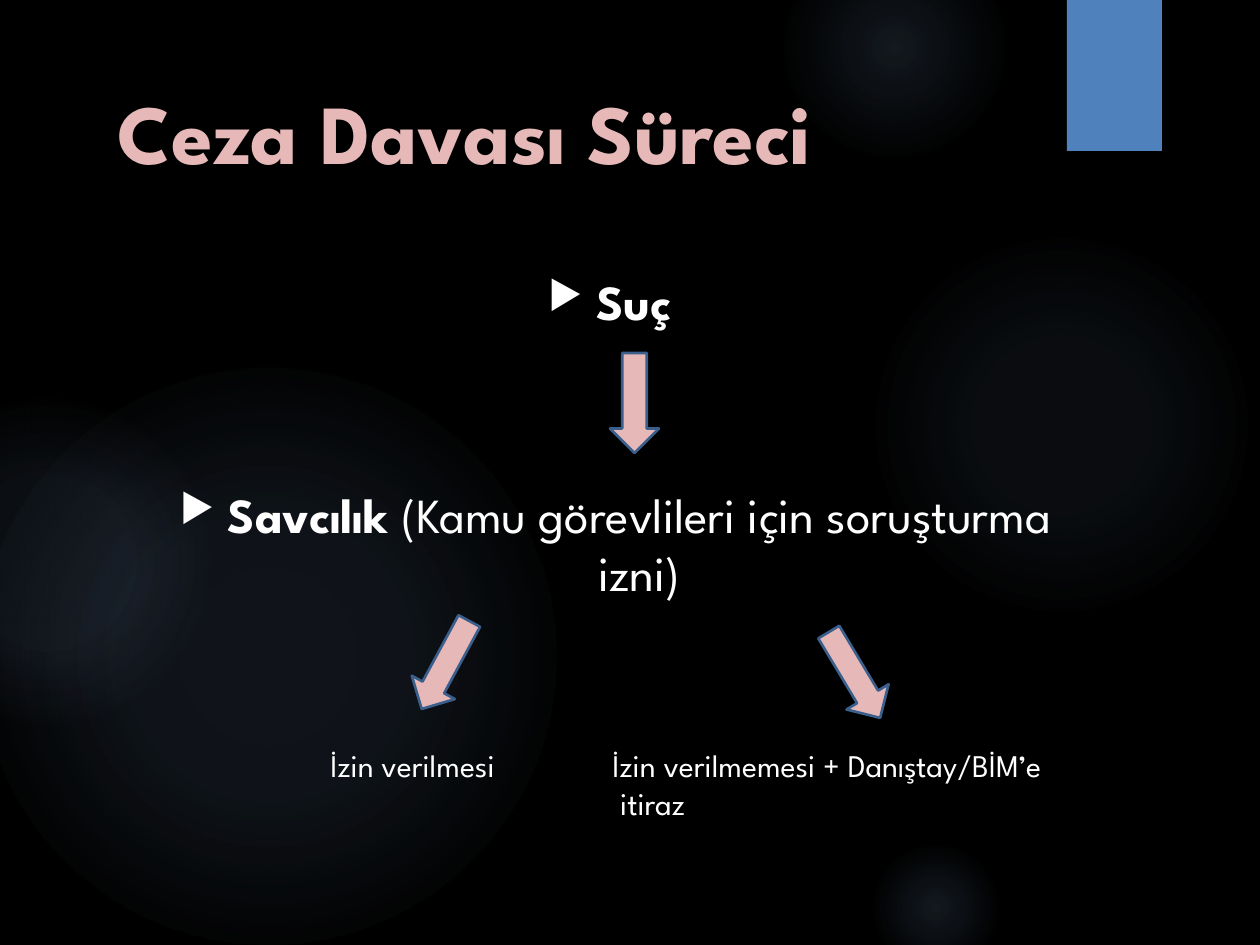
from lxml import etree
from pptx import Presentation
from pptx.dml.color import RGBColor
from pptx.enum.shapes import MSO_SHAPE
from pptx.enum.text import PP_ALIGN
from pptx.oxml import parse_xml
from pptx.oxml.ns import qn
from pptx.util import Emu, Pt

OVAL, RECTANGLE, DOWN_ARROW = MSO_SHAPE.OVAL, MSO_SHAPE.RECTANGLE, MSO_SHAPE.DOWN_ARROW
LEFT, CENTER = PP_ALIGN.LEFT, PP_ALIGN.CENTER
PX = 914400 // 126
DRAWING_NS = "http://schemas.openxmlformats.org/drawingml/2006/main"
FONT = "League Spartan"

BLACK = RGBColor(0x00, 0x00, 0x00)
WHITE = RGBColor(0xFF, 0xFF, 0xFF)
PINK = RGBColor(0xE6, 0xB9, 0xB8)
BLUE = RGBColor(0x4F, 0x81, 0xBD)
DARK_BLUE = RGBColor(0x3A, 0x5F, 0x8C)
GLOW_BLUE = RGBColor(0x8E, 0xB4, 0xE3)

# left, top, diameter, (position %, opacity %) stops
GLOWS = [
    (868, 231, 388, [(0, 7), (36, 6), (69, 0)]),
    (784, -63, 221, [(0, 14), (36, 7), (73, 0)]),
    (868, 840, 136, [(0, 14), (36, 7), (66, 0)]),
    (-21, 368, 577, [(0, 11), (36, 10), (75, 0)]),
    (-116, 399, 325, [(0, 8), (36, 8), (72, 0)]),
]
RIBBON = (1067, 0, 95, 151)

# Each paragraph is a list of (text, bold) runs
TITLE = [[("Ceza Davası Süreci", True)]]
STEPS = [
    [("Suç ", True)],
    [("Savcılık ", True), ("(Kamu görevlileri için soruşturma izni)", False)],
]
GRANTED = [[("İzin verilmesi", False)]]
REFUSED = [[("İzin verilmemesi + Danıştay/BİM’e", False)], [(" itiraz", False)]]

ARROW_SIZE = (49, 100)
ARROWS = [(610, 353, 0), (421, 615, 28.4), (830, 625, 329.1)]  # left, top, rotation


def add_preset(slide, kind, left, top, width, height):
    box = [Emu(n * PX) for n in (left, top, width, height)]
    shape = slide.shapes.add_shape(kind, *box)
    shape.shadow.inherit = False
    return shape


def add_glow(slide, left, top, diameter, stops):
    """Add a circle with a radial fill that fades out."""
    glow = add_preset(slide, OVAL, left, top, diameter, diameter)
    glow.line.fill.background()
    stop_xml = "".join(
        f'<a:gs pos="{position * 1000}"><a:srgbClr val="{GLOW_BLUE}">'
        f'<a:alpha val="{opacity * 1000}"/></a:srgbClr></a:gs>'
        for position, opacity in stops
    )
    fill = parse_xml(
        f'<a:gradFill xmlns:a="{DRAWING_NS}"><a:gsLst>{stop_xml}</a:gsLst>'
        '<a:path path="circle"><a:fillToRect l="50000" t="50000" r="50000" b="50000"/>'
        "</a:path></a:gradFill>"
    )
    glow._element.spPr.find(qn("a:prstGeom")).addnext(fill)


def add_ribbon(slide):
    ribbon = add_preset(slide, RECTANGLE, *RIBBON)
    ribbon.fill.solid()
    ribbon.fill.fore_color.rgb = BLUE
    ribbon.line.fill.background()
    ribbon._element.spPr.find(qn("a:effectLst")).append(parse_xml(
        f'<a:outerShdw xmlns:a="{DRAWING_NS}" blurRad="{Pt(3)}" dist="{Pt(2)}" '
        f'dir="5400000"><a:srgbClr val="{BLACK}"><a:alpha val="45000"/>'
        "</a:srgbClr></a:outerShdw>"
    ))


def add_arrow(slide, left, top, rotation):
    arrow = add_preset(slide, DOWN_ARROW, left, top, *ARROW_SIZE)
    arrow.rotation = rotation
    arrow.fill.solid()
    arrow.fill.fore_color.rgb = PINK
    arrow.line.color.rgb = DARK_BLUE
    arrow.line.width = Pt(1.5)


def add_bullet(paragraph):
    properties = paragraph._p.get_or_add_pPr()
    properties.set("marL", str(48 * PX))
    properties.set("indent", str(-48 * PX))
    color = etree.SubElement(properties, qn("a:buClr"))
    etree.SubElement(color, qn("a:srgbClr"), val=str(WHITE))
    etree.SubElement(properties, qn("a:buSzPct"), val="80000")
    etree.SubElement(properties, qn("a:buChar"), char="▶")


def add_text(slide, box, paragraphs, size, color=WHITE, align=LEFT, bullets=False, gap=0):
    """Add a text box; gap is the space in points between its paragraphs."""
    frame = slide.shapes.add_textbox(*[Emu(n * PX) for n in box]).text_frame
    frame.word_wrap = True
    for index, runs in enumerate(paragraphs):
        paragraph = frame.add_paragraph() if index else frame.paragraphs[0]
        if bullets:
            add_bullet(paragraph)
        paragraph.alignment = align
        if index and gap:
            paragraph.space_before = Pt(gap)
        for text, bold in runs:
            run = paragraph.add_run()
            run.text = text
            run.font.name = FONT
            run.font.size = Pt(size)
            run.font.bold = bold
            run.font.color.rgb = color


def main():
    presentation = Presentation()
    presentation.slide_width = Emu(1260 * PX)
    presentation.slide_height = Emu(945 * PX)
    slide = presentation.slides.add_slide(presentation.slide_layouts[6])
    slide.background.fill.solid()
    slide.background.fill.fore_color.rgb = BLACK

    for glow in GLOWS:
        add_glow(slide, *glow)
    add_ribbon(slide)
    add_text(slide, (105, 74, 903, 210), TITLE, 48, PINK)
    add_text(slide, (164, 265, 903, 476), STEPS, 28, align=CENTER, bullets=True, gap=88)
    for arrow in ARROWS:
        add_arrow(slide, *arrow)
    add_text(slide, (318, 740, 392, 50), GRANTED, 18)
    add_text(slide, (600, 740, 586, 89), REFUSED, 18)
    presentation.save("out.pptx")


if __name__ == "__main__":
    main()
